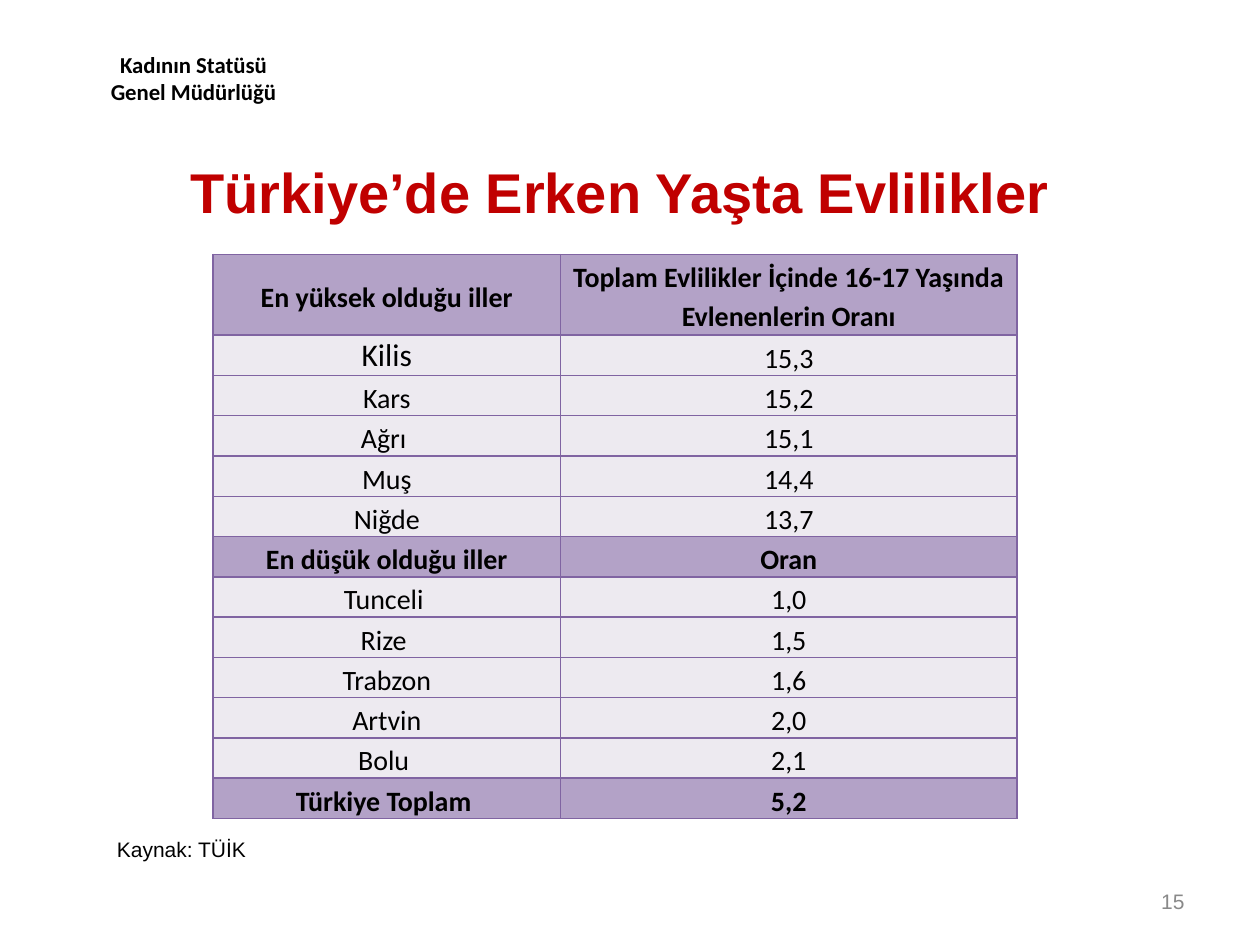
from pptx import Presentation
from pptx.dml.color import RGBColor
from pptx.enum.text import MSO_ANCHOR as Anchor, PP_ALIGN as Align
from pptx.oxml import parse_xml
from pptx.oxml.ns import nsdecls
from pptx.util import Inches, Pt

PURPLE, PALE, BORDER = "B3A2C7", "EDEAF0", "8064A2"
HIGHEST = [("Kilis", "15,3"), ("Kars", "15,2"), ("Ağrı ", "15,1"),
           ("Muş", "14,4"), ("Niğde", "13,7")]
LOWEST = [("Tunceli ", "1,0"), ("Rize ", "1,5"), ("Trabzon", "1,6"),
          ("Artvin", "2,0"), ("Bolu ", "2,1")]
ROWS = [
    ("En yüksek olduğu iller",
     "Toplam Evlilikler İçinde 16-17 Yaşında Evlenenlerin Oranı"),
    *HIGHEST,
    ("En düşük olduğu iller", "Oran"),
    *LOWEST,
    ("Türkiye Toplam ", "5,2"),
]
HEADING_ROWS = (0, len(HIGHEST) + 1, len(ROWS) - 1)


def rgb(color):
    return RGBColor.from_string(color)


def write(tf, text, size, font="Arial", color="000000", bold=False, align=Align.LEFT):
    tf.text = text
    p = tf.paragraphs[0]
    p.alignment = align
    for r in p.runs:
        r.font.name = font
        r.font.size = Pt(size)
        r.font.bold = bold
        r.font.color.rgb = rgb(color)
    return p


def add_text(s, box, text, size, anchor=Anchor.TOP, **style):
    tf = s.shapes.add_textbox(*map(Inches, box)).text_frame
    tf.word_wrap = True
    tf.vertical_anchor = anchor
    write(tf, text, size, **style)


def set_title(s, text):
    sp = s.shapes.title
    sp.left, sp.top, sp.width, sp.height = map(Inches, (0.11, 1.15, 9.22, 0.63))
    tf = sp.text_frame
    tf.margin_left, tf.margin_right = Inches(0.5), Inches(0.1)
    tf.margin_top = tf.margin_bottom = 0
    tf.vertical_anchor = Anchor.BOTTOM
    write(tf, text, 32, color="C00000", bold=True, align=Align.CENTER)


def set_borders(cell, color):
    tc_pr = cell._tc.get_or_add_tcPr()
    for i, side in enumerate(("lnL", "lnR", "lnT", "lnB")):
        tc_pr.insert(i, parse_xml(
            f'<a:{side} {nsdecls("a")} w="12700"><a:solidFill>'
            f'<a:srgbClr val="{color}"/></a:solidFill></a:{side}>'))


def format_cell(cell, text, size, heading, anchor):
    cell.margin_left = cell.margin_right = Inches(0.07)
    cell.margin_top, cell.margin_bottom = Inches(0.01), 0
    cell.vertical_anchor = anchor
    cell.fill.solid()
    cell.fill.fore_color.rgb = rgb(PURPLE if heading else PALE)
    set_borders(cell, BORDER)
    p = write(cell.text_frame, text, size, "Calibri", bold=heading, align=Align.CENTER)
    if size == 16:
        p.line_spacing = 1.15
        p.space_after = Pt(10)


def add_rates_table(s):
    box = map(Inches, (1.69, 2.02, 6.38, 4.48))
    table = s.shapes.add_table(len(ROWS), 2, *box).table
    for column, width in zip(table.columns, (2.76, 3.62)):
        column.width = Inches(width)
    for i, texts in enumerate(ROWS):
        table.rows[i].height = Inches(0.32 if i else 0.64)
        for j, text in enumerate(texts):
            size = 18 if text == "Kilis" else 16
            middle = (i == 0) != (j == 1)
            anchor = Anchor.MIDDLE if middle else Anchor.TOP
            format_cell(table.cell(i, j), text, size, i in HEADING_ROWS, anchor)


def main():
    prs = Presentation()
    prs.slide_width, prs.slide_height = Inches(10), Inches(7.5)
    s = prs.slides.add_slide(prs.slide_layouts[5])
    add_text(s, (0.67, 0.35, 1.73, 0.54), "Kadının Statüsü Genel Müdürlüğü", 13,
             font="Calibri", bold=True, align=Align.CENTER)
    set_title(s, "Türkiye’de Erken Yaşta Evlilikler")
    add_text(s, (7.17, 6.95, 2.33, 0.4), "15", 12, anchor=Anchor.MIDDLE,
             color="898989", align=Align.RIGHT)
    add_rates_table(s)
    add_text(s, (0.83, 6.59, 1.81, 0.3), "Kaynak: TÜİK", 12)
    prs.save("out.pptx")


if __name__ == "__main__":
    main()
